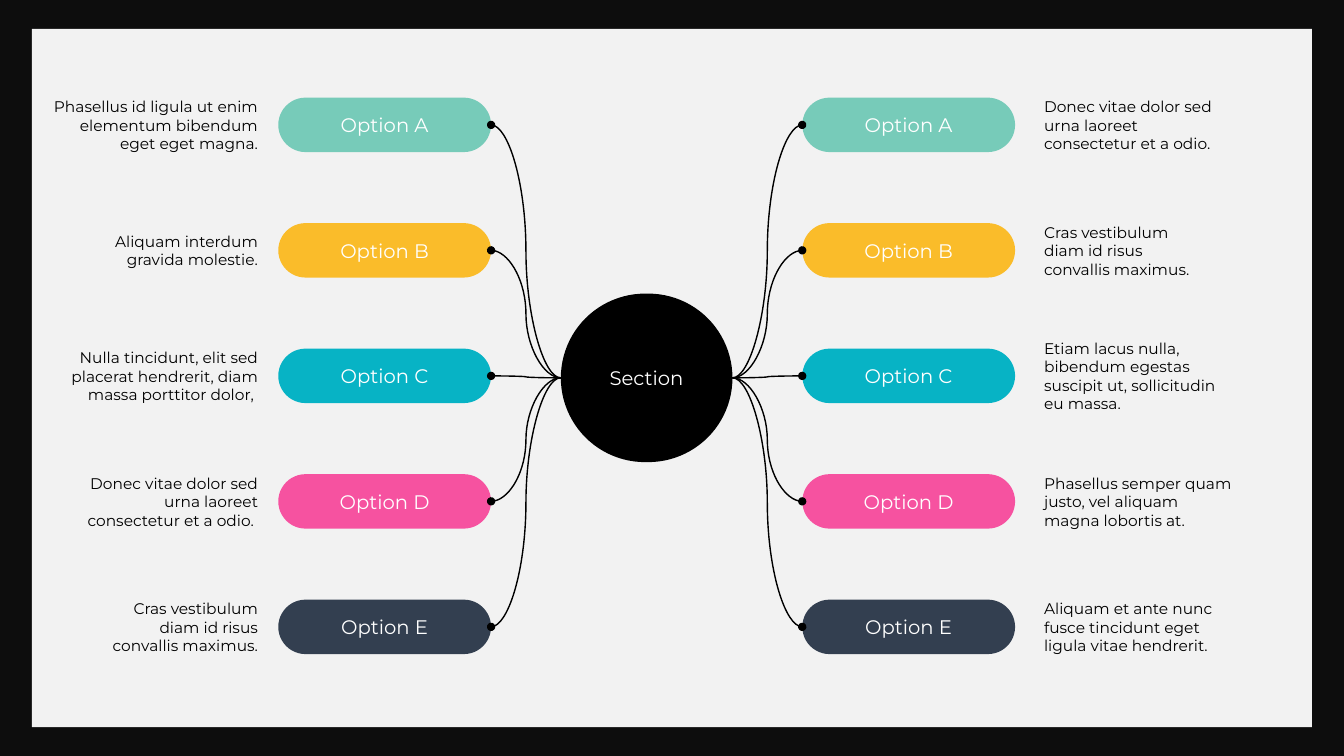
from lxml.etree import SubElement as Sub
from pptx import Presentation as Deck
from pptx.dml.color import RGBColor as Color
from pptx.enum.shapes import MSO_CONNECTOR as Link, MSO_SHAPE as Form
from pptx.enum.text import MSO_ANCHOR as Anchor, MSO_AUTO_SIZE as Fit, PP_ALIGN as Align
from pptx.oxml.ns import qn
from pptx.util import Pt

FONT = "Montserrat"
BLACK, WHITE = "000000", "FFFFFF"
MID, STEP = 269.9, 89.65
PILL_W, PILL_H = 152, 38.9
LINE_H = 13.3
ROWS = [("A", "77CBB9"), ("B", "FABC2A"), ("C", "07B3C5"), ("D", "F652A0"), ("E", "333F50")]
LEFT = dict(pill=198.8, edge=184.4, align=Align.RIGHT, dot=3, hub=1, notes=[
    ("Phasellus id ligula ut enim elementum bibendum eget eget magna.", 148.4, 3),
    ("Aliquam interdum gravida molestie.", 102.4, 2),
    ("Nulla tincidunt, elit sed placerat hendrerit, diam massa porttitor dolor, ", 156.4, 3),
    ("Donec vitae dolor sed urna laoreet consectetur et a odio. ", 129, 3),
    ("Cras vestibulum diam id risus convallis maximus.", 108.8, 3)])
RIGHT = dict(pill=573.1, edge=745.8, align=Align.LEFT, dot=1, hub=3, notes=[
    ("Donec vitae dolor sed urna laoreet consectetur et a odio.", 131, 3),
    ("Cras vestibulum diam id risus convallis maximus.", 113.8, 3),
    ("Etiam lacus nulla, bibendum egestas suscipit ut, sollicitudin eu massa.", 137.5, 4),
    ("Phasellus semper quam justo, vel aliquam magna lobortis at.", 137.5, 3),
    ("Aliquam et ante nunc fusce tincidunt eget ligula vitae hendrerit.", 137.5, 3)])


def paint(fill, tone):
    """Fill with one solid colour."""
    fill.solid()
    fill.fore_color.rgb = Color.from_string(tone)


def apply(item, form):
    """Set each format value on the item."""
    for key, value in form.items():
        setattr(item, key, value)


def write(shape, words, size, tone, align):
    """Put one styled paragraph in the shape."""
    frame = shape.text_frame
    apply(frame, dict(word_wrap=True, vertical_anchor=Anchor.MIDDLE))
    line = frame.paragraphs[0]
    line.alignment = align
    run = line.add_run()
    run.text = words
    apply(run.font, dict(name=FONT, size=Pt(size)))
    paint(run.font.fill, tone)


def block(slide, kind, box, tone):
    """Draw a plain filled shape."""
    shape = slide.shapes.add_shape(kind, *map(Pt, box))
    shape.shadow.inherit = False
    paint(shape.fill, tone)
    shape.line.fill.background()
    return shape


def pill(slide, box, tone, words):
    """Draw a fully rounded shape with a label."""
    shape = block(slide, Form.ROUNDED_RECTANGLE, box, tone)
    shape.adjustments[0] = 0.5
    write(shape, words, 14, WHITE, Align.CENTER)
    return shape


def curve(slide, start, dot, end, site):
    """Join two shapes by a curve with a dot at its start."""
    link = slide.shapes.add_connector(Link.CURVE, 0, 0, 0, 0)
    link.begin_connect(start, dot)
    link.end_connect(end, site)
    link.line.width = Pt(1)
    paint(link.line.fill, BLACK)
    Sub(link.line._get_or_add_ln(), qn("a:headEnd"), type="oval")
    Sub(link._element.spPr, qn("a:effectLst"))


def note(slide, edge, mid, align, words, width, lines):
    """Set a note beside a pill, centred on its row."""
    left = edge - width if align == Align.RIGHT else edge
    high = lines * LINE_H
    box = slide.shapes.add_textbox(*map(Pt, (left, mid - high / 2, width, high)))
    apply(box.text_frame, dict(margin_left=0, margin_right=0, margin_top=0,
                               margin_bottom=0, auto_size=Fit.SHAPE_TO_FIT_TEXT))
    write(box, words, 11, BLACK, align)


def branch(slide, hub, side):
    """Draw the five options on one side of the hub."""
    for row, ((mark, tone), text) in enumerate(zip(ROWS, side["notes"])):
        mid = 89.2 + row * STEP
        box = (side["pill"], mid - PILL_H / 2, PILL_W, PILL_H)
        start = pill(slide, box, tone, f"Option {mark}")
        curve(slide, start, side["dot"], hub, side["hub"])
        note(slide, side["edge"], mid, side["align"], *text)


def main():
    """Build and save the slide."""
    deck = Deck()
    apply(deck, dict(slide_width=Pt(960), slide_height=Pt(540)))
    slide = deck.slides.add_slide(deck.slide_layouts[6])
    paint(slide.background.fill, "0D0D0D")
    block(slide, Form.RECTANGLE, (22.8, 20.6, 914.4, 498.8), "F2F2F2")
    hub = pill(slide, (400.6, MID - 60.2, 122.6, 120.4), BLACK, "Section")
    for side in (RIGHT, LEFT):
        branch(slide, hub, side)
    deck.save("out.pptx")


if __name__ == "__main__":
    main()
